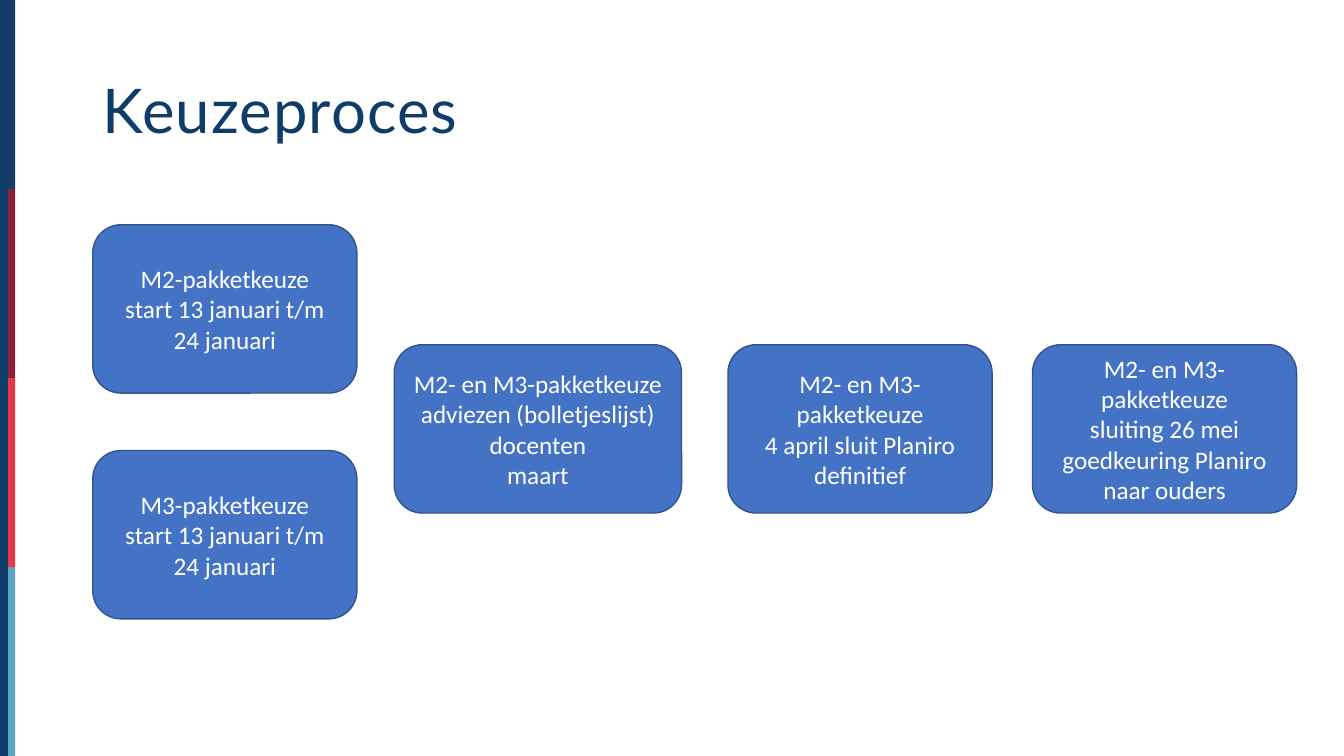
from pptx import Presentation
from pptx.dml.color import RGBColor
from pptx.enum.shapes import MSO_SHAPE
from pptx.enum.text import MSO_ANCHOR, PP_ALIGN
from pptx.util import Inches, Pt

RECTANGLE = MSO_SHAPE.RECTANGLE
ROUNDED = MSO_SHAPE.ROUNDED_RECTANGLE
MIDDLE = MSO_ANCHOR.MIDDLE
CENTER = PP_ALIGN.CENTER

COLORS = {
    "navy": "123D68",
    "maroon": "8B213D",
    "red": "E83948",
    "sky": "5BA5C2",
    "title": "0F3D69",
    "step": "4472C4",
    "step_line": "325491",
    "white": "FFFFFF",
}


def color(name):
    return RGBColor.from_string(COLORS[name])


def add_filled(page, kind, left, top, width, height, fill):
    shape = page.shapes.add_shape(
        kind, Inches(left), Inches(top), Inches(width), Inches(height))
    shape.shadow.inherit = False
    shape.fill.solid()
    shape.fill.fore_color.rgb = color(fill)
    shape.line.fill.background()
    return shape


deck = Presentation()
deck.slide_width = Inches(13.33)
deck.slide_height = Inches(7.5)
page = deck.slides.add_slide(deck.slide_layouts[6])

add_filled(page, RECTANGLE, 0, 0, 0.08, 7.5, "navy")
band_height = 7.5 / 4
for index, name in enumerate(["navy", "maroon", "red", "sky"]):
    add_filled(page, RECTANGLE, 0.08, index * band_height, 0.07, band_height, name)

title = page.shapes.add_textbox(Inches(0.92), Inches(0.4), Inches(11.5), Inches(1.45))
title.text_frame.word_wrap = True
title.text_frame.vertical_anchor = MIDDLE
para = title.text_frame.paragraphs[0]
para.line_spacing = 0.9
span = para.add_run()
span.text = "Keuzeproces"
span.font.name = "Lato"
span.font.size = Pt(44)
span.font.color.rgb = color("title")
span._r.get_or_add_rPr().set("spc", "80")

start = "start 13 januari t/m 24 januari"
both = "M2- en M3-pakketkeuze"
steps = [
    (0.92, 2.23, 2.62, ["M2-pakketkeuze", start]),
    (0.92, 4.47, 2.62, ["M3-pakketkeuze", start]),
    (3.91, 3.42, 2.85, [both, "adviezen (bolletjeslijst) docenten", "maart"]),
    (7.22, 3.42, 2.62, [both, "4 april sluit Planiro", "definitief"]),
    (10.24, 3.42, 2.62, [both, "sluiting 26 mei goedkeuring Planiro naar ouders"]),
]
for left, top, width, lines in steps:
    box = add_filled(page, ROUNDED, left, top, width, 1.67, "step")
    box.line.color.rgb = color("step_line")
    box.line.width = Pt(1)
    frame = box.text_frame
    frame.word_wrap = True
    frame.vertical_anchor = MIDDLE
    frame.text = "\n".join(lines)
    for para in frame.paragraphs:
        para.alignment = CENTER
        para.font.name = "Calibri"
        para.font.size = Pt(18)
        para.font.color.rgb = color("white")

deck.save("out.pptx")
